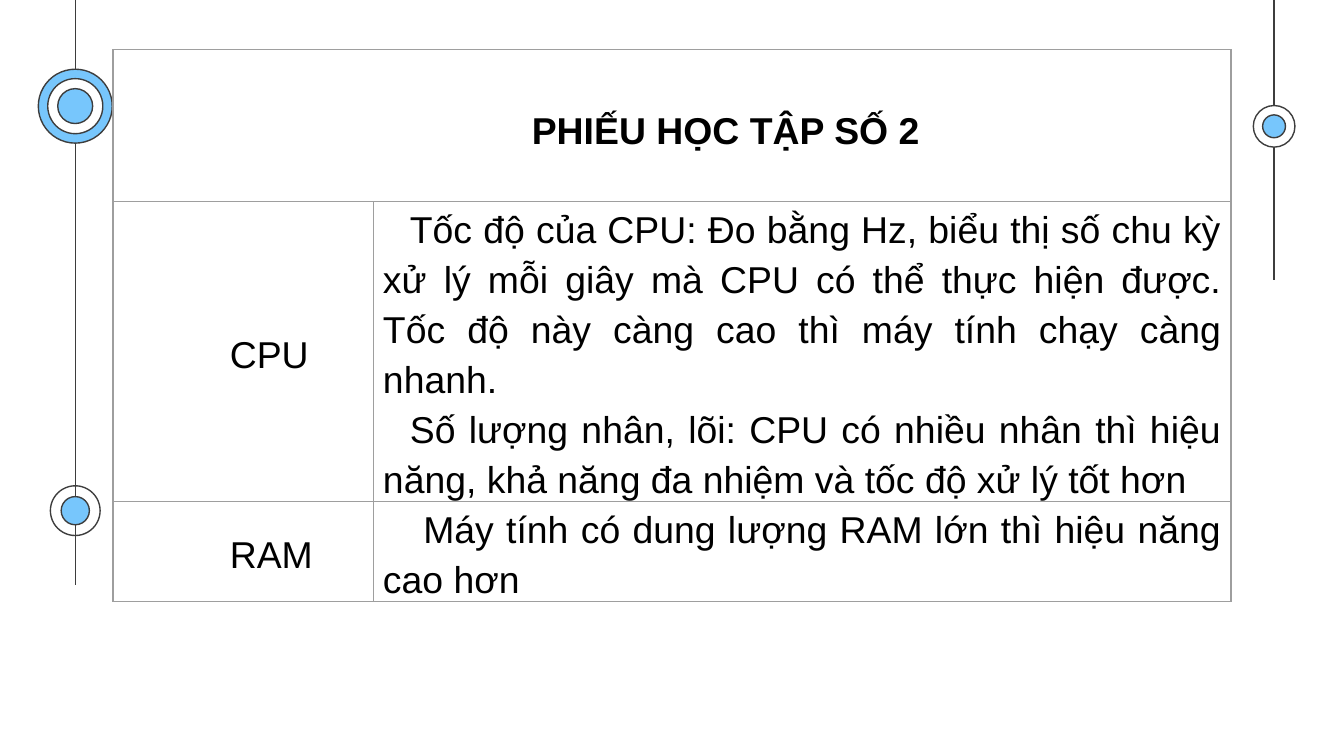
"""Build the worksheet slide about CPU and RAM."""
from dataclasses import dataclass

from lxml import etree
from pptx import Presentation
from pptx.dml.color import RGBColor
from pptx.enum.shapes import MSO_CONNECTOR, MSO_SHAPE
from pptx.enum.text import MSO_ANCHOR, PP_ALIGN
from pptx.oxml.ns import qn
from pptx.util import Inches, Pt

STRAIGHT = MSO_CONNECTOR.STRAIGHT
OVAL = MSO_SHAPE.OVAL
MIDDLE = MSO_ANCHOR.MIDDLE
CENTER, JUSTIFY = PP_ALIGN.CENTER, PP_ALIGN.JUSTIFY


@dataclass(frozen=True)
class Theme:
    font: str = "Arial"
    text_size: float = 20
    stroke: float = 0.75
    line_spacing: float = 1.2
    ink: str = "000000"
    outline: str = "3D3D3D"
    grid: str = "9E9E9E"
    blue: str = "77C6FC"
    white: str = "FFFFFF"


THEME = Theme()


@dataclass(frozen=True)
class Rail:
    x: float
    bottom: float


@dataclass(frozen=True)
class Disc:
    x: float
    y: float
    diameter: float
    fill: str | None


@dataclass(frozen=True)
class Topic:
    name: str
    facts: tuple[str, ...]
    height: float
    first_indent: float


SLIDE_WIDTH = Inches(10)
SLIDE_HEIGHT = SLIDE_WIDTH * 9 // 16
LEFT_RAIL, RIGHT_RAIL = Rail(0.56, 4.35), Rail(9.48, 2.08)
DISCS = (
    Disc(LEFT_RAIL.x, 3.8, 0.37, None),
    Disc(LEFT_RAIL.x, 3.8, 0.21, THEME.blue),
    Disc(RIGHT_RAIL.x, 0.94, 0.31, THEME.white),
    Disc(RIGHT_RAIL.x, 0.94, 0.17, THEME.blue),
    Disc(LEFT_RAIL.x, 0.79, 0.55, THEME.blue),
    Disc(LEFT_RAIL.x, 0.79, 0.41, THEME.white),
    Disc(LEFT_RAIL.x, 0.79, 0.26, THEME.blue),
)
HEADING = "PHIẾU HỌC TẬP SỐ 2"
HEADING_HEIGHT = 1.13
TOPICS = (
    Topic("CPU", (
        "Tốc độ của CPU: Đo bằng Hz, biểu thị số chu kỳ xử lý mỗi giây mà CPU "
        "có thể thực hiện được. Tốc độ này càng cao thì máy tính chạy càng nhanh.",
        "Số lượng nhân, lõi: CPU có nhiều nhân thì hiệu năng, khả năng đa nhiệm "
        "và tốc độ xử lý tốt hơn",
    ), 2.23, 0.2),
    Topic("RAM", ("Máy tính có dung lượng RAM lớn thì hiệu năng cao hơn",), 0.74, 0.3),
)
COLUMNS = (1.94, 6.38)


def draw_rail(slide, rail: Rail) -> None:
    line = slide.shapes.add_connector(
        STRAIGHT, Inches(rail.x), 0, Inches(rail.x), Inches(rail.bottom))
    line.line.color.rgb = RGBColor.from_string(THEME.outline)
    line.line.width = Pt(THEME.stroke)
    etree.SubElement(line.element.spPr, qn("a:effectLst"))


def draw_disc(slide, disc: Disc) -> None:
    radius = disc.diameter / 2
    circle = slide.shapes.add_shape(
        OVAL, Inches(disc.x - radius), Inches(disc.y - radius),
        Inches(disc.diameter), Inches(disc.diameter))
    circle.shadow.inherit = False
    if disc.fill is None:
        circle.fill.background()
    else:
        circle.fill.solid()
        circle.fill.fore_color.rgb = RGBColor.from_string(disc.fill)
    circle.line.color.rgb = RGBColor.from_string(THEME.outline)
    circle.line.width = Pt(THEME.stroke)


def write(frame, *texts: str, align=JUSTIFY, bold: bool = False,
          margin: float = 0, first_indent: float = 0) -> None:
    for index, text in enumerate(texts):
        paragraph = frame.add_paragraph() if index else frame.paragraphs[0]
        paragraph.alignment = align
        paragraph.line_spacing = THEME.line_spacing
        properties = paragraph._p.get_or_add_pPr()
        properties.set("marL", str(Inches(margin)))
        properties.set("indent", str(Inches(first_indent)))
        run = paragraph.add_run()
        run.text = text
        run.font.name = THEME.font
        run.font.size = Pt(THEME.text_size)
        run.font.bold = bold
        run.font.color.rgb = RGBColor.from_string(THEME.ink)


def style_cell(cell) -> None:
    cell.fill.background()
    cell.margin_left = cell.margin_right = Inches(0.07)
    cell.margin_top = cell.margin_bottom = 0
    cell.vertical_anchor = MIDDLE
    properties = cell._tc.get_or_add_tcPr()
    for position, side in enumerate(("lnL", "lnR", "lnT", "lnB")):
        border = etree.Element(qn(f"a:{side}"), w=str(Pt(THEME.stroke)))
        fill = etree.SubElement(border, qn("a:solidFill"))
        etree.SubElement(fill, qn("a:srgbClr"), val=THEME.grid)
        properties.insert(position, border)


def draw_worksheet(slide) -> None:
    heights = (HEADING_HEIGHT, *(topic.height for topic in TOPICS))
    table = slide.shapes.add_table(
        len(heights), len(COLUMNS), Inches(0.84), Inches(0.37),
        Inches(sum(COLUMNS)), Inches(sum(heights))).table
    table.first_row = table.horz_banding = False
    for column, width in zip(table.columns, COLUMNS):
        column.width = Inches(width)
    for row, height in zip(table.rows, heights):
        row.height = Inches(height)
    for cell in table.iter_cells():
        style_cell(cell)

    heading = table.cell(0, 0)
    heading.merge(table.cell(0, 1))
    heading.margin_top = Inches(0.03)
    write(heading.text_frame, HEADING, align=CENTER, bold=True,
          margin=0.5, first_indent=0.3)
    for row, topic in enumerate(TOPICS, start=1):
        write(table.cell(row, 0).text_frame, topic.name, margin=0.5, first_indent=0.3)
        write(table.cell(row, 1).text_frame, *topic.facts,
              first_indent=topic.first_indent)


def main() -> None:
    presentation = Presentation()
    presentation.slide_width = SLIDE_WIDTH
    presentation.slide_height = SLIDE_HEIGHT
    slide = presentation.slides.add_slide(presentation.slide_layouts[6])
    for rail in (LEFT_RAIL, RIGHT_RAIL):
        draw_rail(slide, rail)
    for disc in DISCS:
        draw_disc(slide, disc)
    draw_worksheet(slide)
    presentation.save("out.pptx")


if __name__ == "__main__":
    main()
